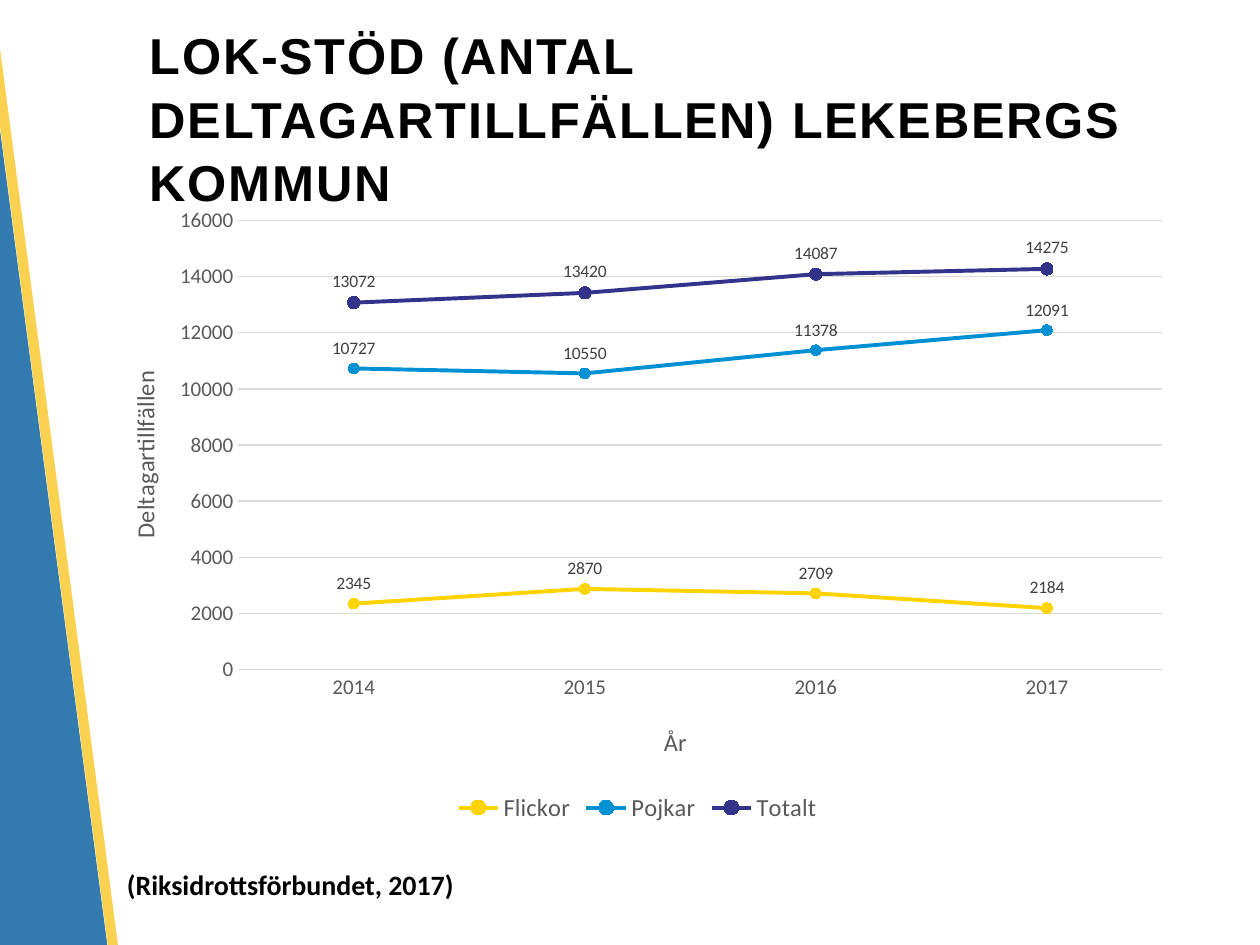
from pptx import Presentation
from pptx.chart.data import CategoryChartData
from pptx.dml.color import RGBColor
from pptx.enum.chart import (XL_CHART_TYPE as ChartType, XL_LABEL_POSITION as LabelPosition,
                             XL_LEGEND_POSITION as LegendPosition, XL_MARKER_STYLE as MarkerStyle,
                             XL_TICK_MARK as TickMark)
from pptx.enum.shapes import MSO_SHAPE as Shape
from pptx.enum.text import MSO_ANCHOR as Anchor
from pptx.oxml import parse_xml
from pptx.oxml.ns import nsdecls, qn
from pptx.util import Pt


def color(value):
    return RGBColor.from_string(value)


def format_font(font, size, fill, name="Calibri", bold=False):
    font.size = Pt(size)
    font.name = name
    font.bold = bold
    font.color.rgb = color(fill)


def write_text(frame, text, spacing=None, line_spacing=None, **font_format):
    paragraph = frame.paragraphs[0]
    run = paragraph.add_run()
    run.text = text
    format_font(run.font, **font_format)
    if line_spacing:
        paragraph.line_spacing = line_spacing
    if spacing:
        run.font._element.set("spc", str(int(spacing * 100)))


def set_layout(parent, **places):
    """Place a chart part by fractions of the chart area."""
    for old in parent.findall(qn("c:layout")):
        parent.remove(old)
    inner = '<c:layoutTarget val="inner"/>' if "w" in places else ""
    modes = "".join(f'<c:{key}Mode val="edge"/>' for key in "xy")
    values = "".join(f'<c:{key} val="{value}"/>' for key, value in places.items())
    layout = parse_xml(f'<c:layout {nsdecls("c")}><c:manualLayout>{inner}{modes}{values}'
                       '</c:manualLayout></c:layout>')
    text = parent.find(qn("c:tx"))
    parent.insert(0 if text is None else 1, layout)


class SlideBuilder:
    black, gray, label_gray, grid = "000000", "595959", "404040", "D9D9D9"

    def __init__(self, slide):
        self.slide = slide

    def band(self, left, top, width, height, fill, opacity):
        shape = self.slide.shapes.add_shape(
            Shape.RECTANGLE, Pt(left), Pt(top), Pt(width), Pt(height))
        shape.rotation = 352.5
        shape.shadow.inherit = False
        shape.line.fill.background()
        shape.fill.solid()
        shape.fill.fore_color.rgb = color(fill)
        tint = shape._element.spPr.find(".//" + qn("a:srgbClr"))
        tint.append(parse_xml(f'<a:alpha {nsdecls("a")} val="{opacity * 1000}"/>'))

    def text(self, left, top, width, height, text, wrap=True, anchor=Anchor.TOP, **text_format):
        box = self.slide.shapes.add_textbox(Pt(left), Pt(top), Pt(width), Pt(height))
        frame = box.text_frame
        frame.word_wrap = wrap
        frame.vertical_anchor = anchor
        write_text(frame, text, **text_format)

    def axis(self, axis, title, x, y):
        axis.major_tick_mark = axis.minor_tick_mark = TickMark.NONE
        format_font(axis.tick_labels.font, 12, self.gray)
        write_text(axis.axis_title.text_frame, title, size=14, fill=self.gray)
        set_layout(axis.axis_title._element, x=x, y=y)

    def grid_line(self, line):
        line.color.rgb = color(self.grid)
        line.width = Pt(0.75)

    def series(self, series, fill, marker_size):
        series.smooth = False
        series.format.line.color.rgb = color(fill)
        series.format.line.width = Pt(2.25)
        marker = series.marker
        marker.style = MarkerStyle.CIRCLE
        marker.size = marker_size
        marker.format.fill.solid()
        marker.format.fill.fore_color.rgb = color(fill)
        marker.format.line.color.rgb = color(fill)
        labels = series.data_labels
        labels.show_value = True
        labels.position = LabelPosition.ABOVE
        format_font(labels.font, 10, self.label_gray)

    def line_chart(self, left, top, width, height, categories, rows):
        data = CategoryChartData()
        data.categories = categories
        for name, values, _, _ in rows:
            data.add_series(name, values)
        chart = self.slide.shapes.add_chart(
            ChartType.LINE_MARKERS, Pt(left), Pt(top), Pt(width), Pt(height), data).chart
        format_font(chart.font, 10, self.black)
        chart.has_title = False
        chart.has_legend = True
        chart.legend.position = LegendPosition.BOTTOM
        chart.legend.include_in_layout = False
        format_font(chart.legend.font, 14, self.gray)

        self.axis(chart.category_axis, "År", 0.52, 0.83)
        self.grid_line(chart.category_axis.format.line)
        value_axis = chart.value_axis
        self.axis(value_axis, "Deltagartillfällen", 0.03, 0.27)
        value_axis.minimum_scale, value_axis.maximum_scale = 0, 16000
        value_axis.major_unit = 2000
        value_axis.format.line.fill.background()
        self.grid_line(value_axis.major_gridlines.format.line)

        plot = chart.plots[0]
        plot.vary_by_categories = False
        for series, (_, _, fill, marker_size) in zip(plot.series, rows):
            self.series(series, fill, marker_size)
        set_layout(chart._chartSpace.chart.plotArea, x=0.135, y=0.04, w=0.845, h=0.71)


def main():
    presentation = Presentation()
    presentation.slide_width, presentation.slide_height = Pt(720), Pt(540)
    builder = SlideBuilder(presentation.slides.add_slide(presentation.slide_layouts[6]))

    builder.band(-37.4, -118, 65.5, 815.8, "005B9C", 80)
    builder.band(27.4, -127.4, 5.8, 815, "FAC828", 81)
    builder.text(78.5, 21.6, 625, 90, "LOK-STÖD (ANTAL DELTAGARTILLFÄLLEN) LEKEBERGS KOMMUN",
                 anchor=Anchor.MIDDLE, size=28.8, fill=builder.black, name="Arial", bold=True,
                 spacing=1, line_spacing=1.05)
    builder.text(65.5, 492.5, 204.5, 26.6, "(Riksidrottsförbundet, 2017)", wrap=False,
                 size=16, fill=builder.black, bold=True)
    builder.line_chart(51.8, 111.6, 625, 361.4, ["2014", "2015", "2016", "2017"], [
        ("Flickor", [2345, 2870, 2709, 2184], "FDD400", 6),
        ("Pojkar", [10727, 10550, 11378, 12091], "0090D4", 6),
        ("Totalt", [13072, 13420, 14087, 14275], "33338B", 7),
    ])
    presentation.save("out.pptx")


if __name__ == "__main__":
    main()
